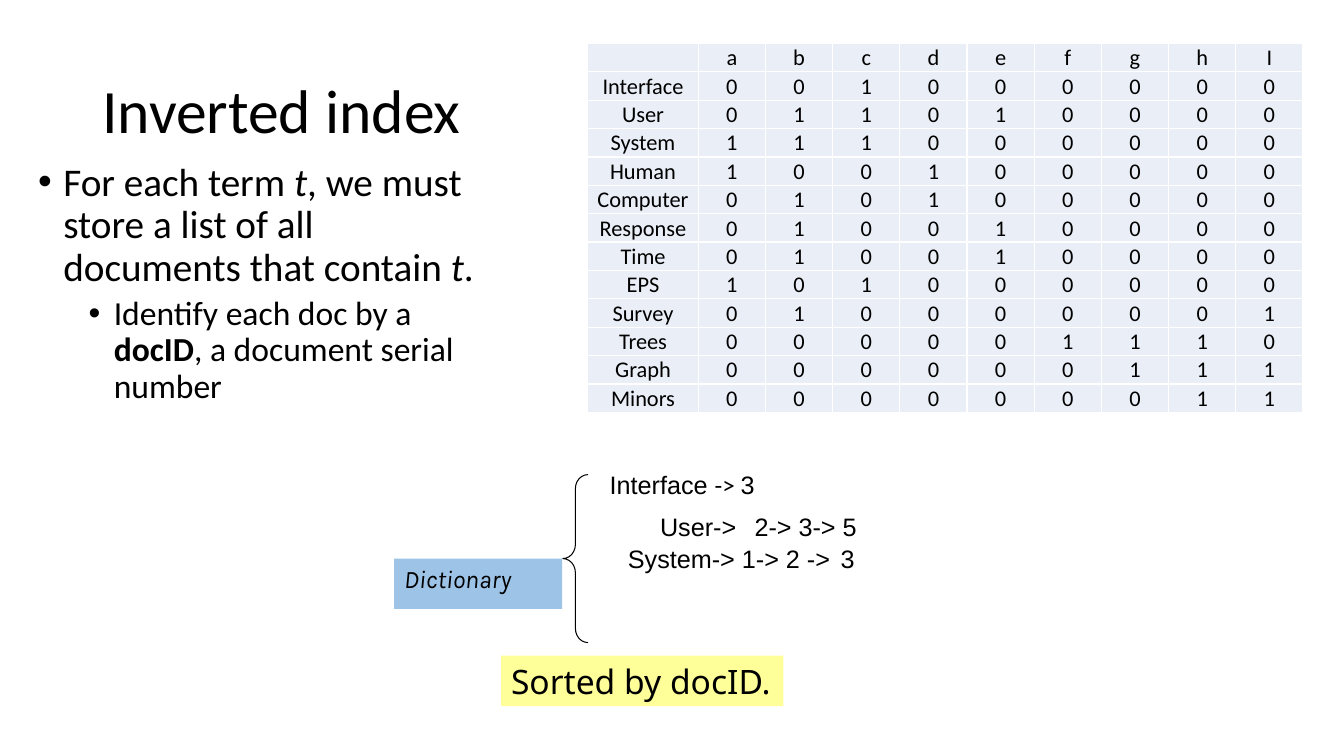
from pptx import Presentation
from pptx.dml.color import RGBColor
from pptx.enum.shapes import MSO_SHAPE as Kind
from pptx.enum.text import MSO_ANCHOR as Anchor, PP_ALIGN as Align
from pptx.oxml.ns import qn
from pptx.util import Pt
from lxml.etree import SubElement


def paint(color, tone):
    color.rgb = RGBColor.from_string(tone)


def style(par, size, face):
    par.font.size, par.font.name = Pt(size), face
    paint(par.font.color, "000000")


deck = Presentation()
deck.slide_width, deck.slide_height = Pt(960), Pt(540)
slide = deck.slides.add_slide(deck.slide_layouts[6])
shapes = slide.shapes

# Title
title = shapes.add_textbox(Pt(66), Pt(29), Pt(828), Pt(104)).text_frame
title.word_wrap = True
title.vertical_anchor = Anchor.MIDDLE
title.text = "Inverted index"
title.paragraphs[0].line_spacing = 0.9
style(title.paragraphs[0], 44, "Calibri")

# Bullets: size, left margin, space before, runs with their emphasis
points = [
    (28, 18, 10, [("For each term ", ""), ("t", "i"),
                  (", we must store a list of all documents that contain ", ""),
                  ("t", "i"), (".", "")]),
    (24, 54, 5, [("Identify each doc by a ", ""), ("docID", "b"),
                 (", a document serial number", "")]),
]
body = shapes.add_textbox(Pt(20.2), Pt(112.6), Pt(338), Pt(343)).text_frame
body.word_wrap = True
for level, (size, left, gap, runs) in enumerate(points):
    par = body.add_paragraph() if level else body.paragraphs[0]
    par.level, par.line_spacing, par.space_before = level, 0.9, Pt(gap)
    props = par._p.get_or_add_pPr()
    props.set("marL", str(Pt(left)))
    props.set("indent", str(Pt(-18)))
    SubElement(props, qn("a:buFont"), typeface="Arial")
    SubElement(props, qn("a:buChar"), char="•")
    style(par, size, "Calibri")
    for words, mark in runs:
        run = par.add_run()
        run.text = words
        if mark == "i":
            run.font.italic = True
        elif mark == "b":
            run.font.bold = True

# Term and document matrix
terms = [
    ("", "abcdefghI"),
    ("Interface", "001000000"),
    ("User", "011010000"),
    ("System", "111000000"),
    ("Human", "100100000"),
    ("Computer", "010100000"),
    ("Response", "010010000"),
    ("Time", "010010000"),
    ("EPS", "101000000"),
    ("Survey", "010000001"),
    ("Trees", "000001110"),
    ("Graph", "000000111"),
    ("Minors", "000000011"),
]
grid = shapes.add_table(len(terms), 10, Pt(419.8), Pt(31), Pt(511), Pt(263.6)).table
grid.first_row = grid.horz_banding = False
for col, column in enumerate(grid.columns):
    column.width = Pt(48 if col else 79)
for row, (term, flags) in enumerate(terms):
    grid.rows[row].height = Pt(20.28)
    for col, value in enumerate([term, *flags]):
        cell = grid.cell(row, col)
        cell.fill.solid()
        paint(cell.fill.fore_color, "EAEFF7")
        cell.margin_left = cell.margin_right = cell.margin_top = Pt(0.72)
        cell.margin_bottom = 0
        cell.vertical_anchor = Anchor.MIDDLE
        par = cell.text_frame.paragraphs[0]
        if value:
            par.text = value
        else:
            SubElement(par._p, qn("a:endParaRPr"), sz="1600")
        par.alignment = Align.CENTER
        style(par, 16, "Calibri")

# Postings lists: left, top, width, tab stop, runs with their fonts
lists = [
    (428.4, 332, 122, None, [("Interface ", "Arial"), ("-> ", "Calibri"), ("3", "Arial")]),
    (464.4, 361.5, 159, 67.5, [("User->\t2-> 3-> 5", "Arial")]),
    (441.4, 384.5, 182, 152, [("System-> 1-> 2 ->\t3", "Arial")]),
]
for left, top, width, stop, runs in lists:
    frame = shapes.add_textbox(Pt(left), Pt(top), Pt(width), Pt(29)).text_frame
    frame.word_wrap = True
    par = frame.paragraphs[0]
    if stop:
        tabs = SubElement(par._p.get_or_add_pPr(), qn("a:tabLst"))
        SubElement(tabs, qn("a:tab"), pos=str(Pt(stop)), algn="l")
    style(par, 18, "Arial")
    for words, face in runs:
        run = par.add_run()
        run.text = words
        run.font.name = face

# Brace
brace = shapes.add_shape(Kind.LEFT_BRACE, Pt(402), Pt(339), Pt(18), Pt(120))
brace.shadow.inherit = False
brace.adjustments[0] = 0.556
brace.fill.background()
paint(brace.line.color, "000000")
brace.line.width = Pt(0.75)

# Labels
labels = [
    ("Dictionary", 281.6, 399, 120, "9DC3E6", 18, "Karla", True),
    ("Sorted by docID.", 358, 468.4, 201.6, "FFFF99", 24, "Noto Sans", False),
]
for words, left, top, width, tone, size, face, slant in labels:
    label = shapes.add_shape(Kind.RECTANGLE, Pt(left), Pt(top), Pt(width), Pt(36))
    label.shadow.inherit = False
    label.fill.solid()
    paint(label.fill.fore_color, tone)
    label.line.fill.background()
    frame = label.text_frame
    frame.word_wrap = True
    frame.margin_right = 0
    frame.vertical_anchor = Anchor.TOP
    frame.text = words
    par = frame.paragraphs[0]
    par.alignment = Align.LEFT
    style(par, size, face)
    par.font.italic = slant

deck.save("out.pptx")
